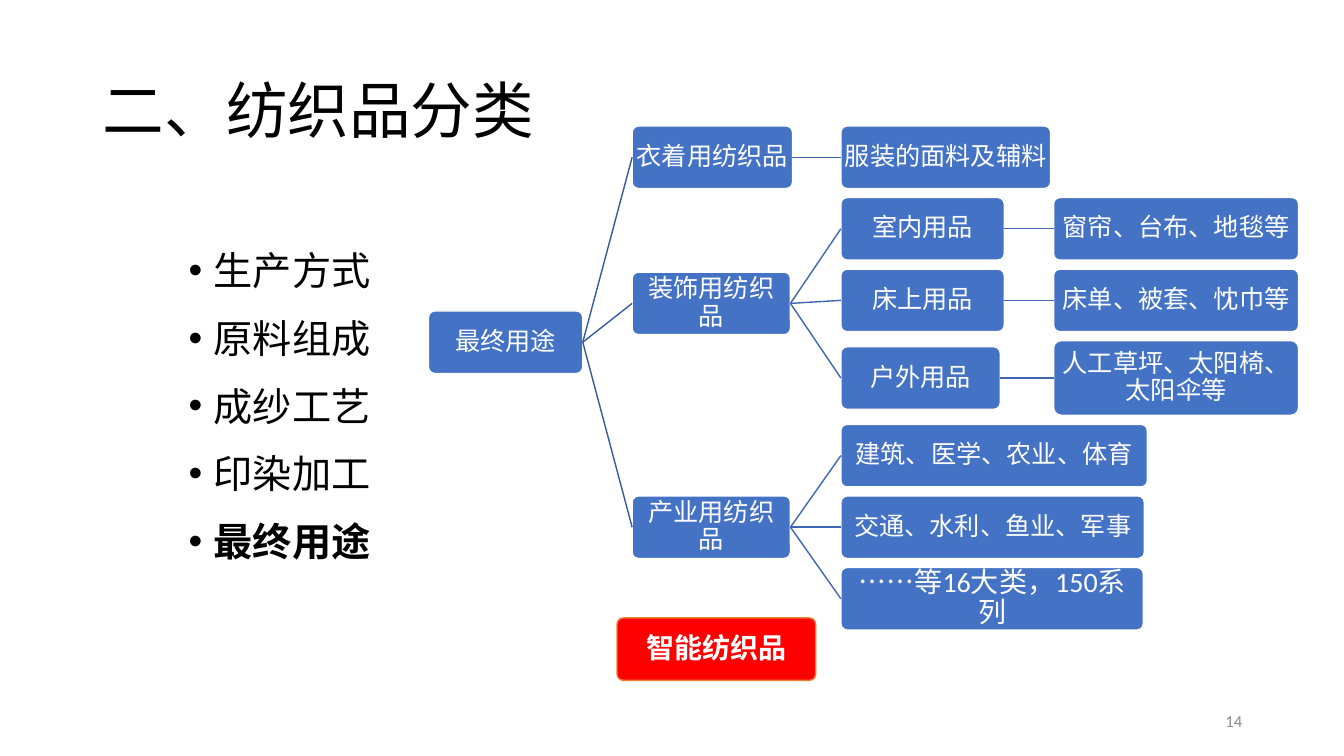
from lxml import etree
from pptx import Presentation
from pptx.dml.color import RGBColor
from pptx.enum import shapes, text
from pptx.oxml import ns
from pptx.util import Inches, Pt

BLACK = RGBColor(0, 0, 0)
WHITE = RGBColor(0xFF, 0xFF, 0xFF)
GRAY = RGBColor(0x8C, 0x8C, 0x8C)
BLUE = RGBColor(0x44, 0x72, 0xC4)
TRUNK = RGBColor(0x36, 0x5B, 0x9D)
BRANCH = RGBColor(0x3E, 0x67, 0xB2)
RED = RGBColor(0xFF, 0, 0)
ORANGE = RGBColor(0xED, 0x7D, 0x31)
CJK, LATIN = "Noto Sans CJK SC", "Calibri"

COLUMNS = [0, 2.02, 4.09, 6.2]  # left edge of each tree level
NODE_H, TALL_H, GAP = 0.62, 0.74, 0.09

# (label, width, children)
TREE = ("最终用途", 1.53, [
    ("衣着用纺织品", 1.59, [("服装的面料及辅料", 2.08, [])]),
    ("装饰用纺织品", 1.57, [
        ("室内用品", 1.62, [("窗帘、台布、地毯等", 2.43, [])]),
        ("床上用品", 1.62, [("床单、被套、忱巾等", 2.43, [])]),
        ("户外用品", 1.58, [("人工草坪、太阳椅、\n太阳伞等", 2.43, [])]),
    ]),
    ("产业用纺织品", 1.57, [
        ("建筑、医学、农业、体育", 3.04, []),
        ("交通、水利、鱼业、军事", 3.01, []),
        ("……等16大类，150系列", 3, []),
    ]),
])
TOPICS = ["生产方式", "原料组成", "成纱工艺", "印染加工", "最终用途"]


def place(sp, left, top, width, height):
    sp.left, sp.top = Inches(left), Inches(top)
    sp.width, sp.height = Inches(width), Inches(height)


def format_runs(p, size, color, latin=LATIN, bold=False):
    for r in p.runs:
        r.font.size, r.font.bold, r.font.name = Pt(size), bold, latin
        r.font.color.rgb = color
        ea = etree.SubElement(r.font._element, ns.qn("a:ea"))
        ea.set("typeface", CJK)


def add_title(s, box):
    sp = s.shapes.title
    place(sp, *box)
    tf = sp.text_frame
    tf.text = "二、纺织品分类"
    tf.vertical_anchor = text.MSO_ANCHOR.MIDDLE
    p = tf.paragraphs[0]
    p.alignment, p.line_spacing = text.PP_ALIGN.LEFT, 0.9
    format_runs(p, 44, BLACK, CJK)


def add_topics(s, box):
    sp = s.placeholders[1]
    place(sp, *box)
    tf = sp.text_frame
    tf.text = "\n".join(TOPICS)
    for i, p in enumerate(tf.paragraphs):
        pPr = p._p.get_or_add_pPr()
        pPr.set("marL", str(Inches(0.25)))
        pPr.set("indent", str(-Inches(0.25)))
        etree.SubElement(pPr, ns.qn("a:buFont")).set("typeface", "Arial")
        etree.SubElement(pPr, ns.qn("a:buChar")).set("char", "•")
        p.line_spacing = 1.14
        p.space_before = Pt(10 if i else 0)
        format_runs(p, 28, BLACK, CJK, bold=i == len(TOPICS) - 1)


def add_node(s, label, box, fill=BLUE, line=WHITE, size=18, bold=False):
    sp = s.shapes.add_shape(shapes.MSO_SHAPE.ROUNDED_RECTANGLE,
                            *[Inches(v) for v in box])
    sp.adjustments[0] = 0.1
    sp.shadow.inherit = False
    sp.fill.solid()
    sp.fill.fore_color.rgb = fill
    sp.line.color.rgb, sp.line.width = line, Pt(1)
    tf = sp.text_frame
    tf.word_wrap = True
    tf.vertical_anchor = text.MSO_ANCHOR.MIDDLE
    tf.margin_left = tf.margin_right = Inches(0.02)
    tf.margin_top = tf.margin_bottom = Inches(0.02)
    tf.text = label
    for p in tf.paragraphs:
        p.alignment, p.line_spacing = text.PP_ALIGN.CENTER, 0.9
        format_runs(p, size, WHITE, bold=bold)
    return sp


def add_link(s, parent, child, color):
    cx = s.shapes.add_connector(shapes.MSO_CONNECTOR.STRAIGHT, 0, 0, 0, 0)
    cx.begin_connect(parent, 3)
    cx.end_connect(child, 1)
    cx.line.color.rgb, cx.line.width = color, Pt(1)
    etree.SubElement(cx._element.spPr, ns.qn("a:effectLst"))


def add_tree(s, node, left, top, level=0):
    """Stack the leaves from top and centre each parent on its children.

    Returns the node's shape, its centre height and the next free top.
    """
    label, width, children = node
    height = TALL_H if "\n" in label else NODE_H
    center, bottom = top + height / 2, top + height + GAP
    branches, centers = [], []
    for child in children:
        sp, child_center, top = add_tree(s, child, left, top, level + 1)
        branches.append(sp)
        centers.append(child_center)
    if children:
        center, bottom = (centers[0] + centers[-1]) / 2, top
    box = (left + COLUMNS[level], center - height / 2, width, height)
    sp = add_node(s, label, box, size=20 if label.startswith("…") else 18)
    for branch in branches:
        add_link(s, sp, branch, BRANCH if level else TRUNK)
    return sp, center, bottom


def add_page_number(s, box):
    tf = s.shapes.add_textbox(*[Inches(v) for v in box]).text_frame
    tf.word_wrap = True
    tf.vertical_anchor = text.MSO_ANCHOR.MIDDLE
    tf.text = "14"
    p = tf.paragraphs[0]
    p.alignment = text.PP_ALIGN.RIGHT
    format_runs(p, 12, GRAY)


def main():
    prs = Presentation()
    prs.slide_width, prs.slide_height = Inches(13.33), Inches(7.5)
    s = prs.slides.add_slide(prs.slide_layouts[1])
    add_title(s, (0.92, 0.4, 11.5, 1.45))
    add_topics(s, (1.77, 2.33, 2.09, 3.41))
    add_tree(s, TREE, 4.25, 1.25)
    add_node(s, "智能纺织品", (6.12, 6.13, 1.97, 0.62), RED, ORANGE, 20, True)
    add_page_number(s, (9.42, 6.95, 3, 0.4))
    prs.save("out.pptx")


if __name__ == "__main__":
    main()
